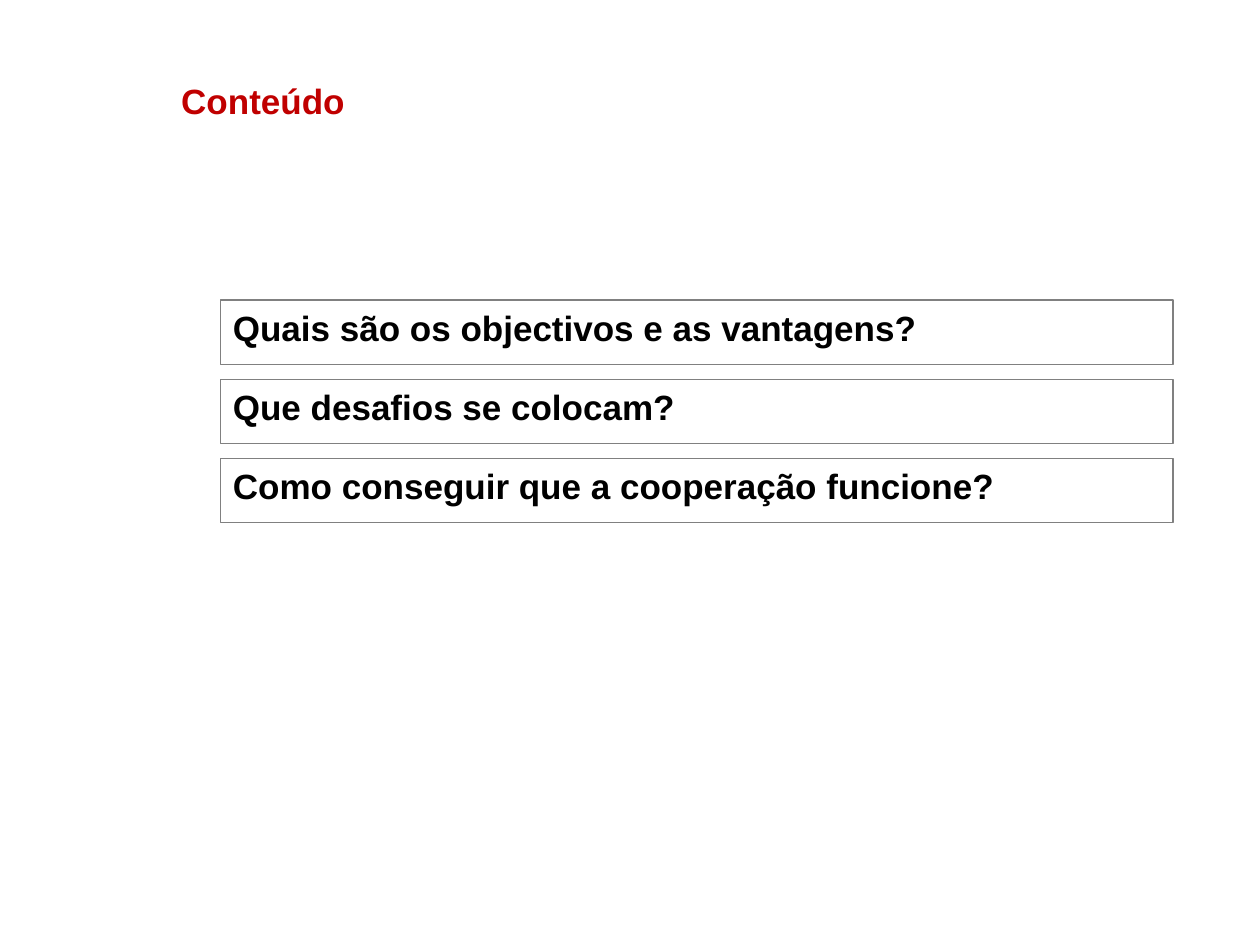
from dataclasses import dataclass

from pptx import Presentation
from pptx.dml.color import RGBColor
from pptx.enum import shapes, text
from pptx.util import Pt


@dataclass(frozen=True)
class Theme:
    font: str = "Arial"
    size: float = 20
    title: str = "C00000"
    body: str = "000000"
    border: str = "808080"
    border_width: float = 0.75


@dataclass(frozen=True)
class Label:
    """A line of text and its place, in points."""
    words: str
    left: float
    top: float
    height: float
    color: str
    space_after: float = 0
    width: float = 544.3


THEME = Theme()
LEFT, TOP, HEIGHT, STEP = 126, 171.4, 36.7, 45.3
TITLE = Label("Conteúdo", 96.5, 41.8, 35.3, THEME.title)
QUESTIONS = [
    ("Quais são os objectivos e as vantagens?", 0),
    ("Que desafios se colocam?", 12),
    ("Como conseguir que a cooperação funcione?", 12),
]


def write(sp, label: Label) -> None:
    tf = sp.text_frame
    tf.word_wrap = True
    tf.vertical_anchor = text.MSO_ANCHOR.TOP
    p = tf.paragraphs[0]
    p.alignment = text.PP_ALIGN.LEFT
    p.space_after = Pt(label.space_after)
    r = p.add_run()
    r.text = label.words
    formats = {"name": THEME.font, "size": Pt(THEME.size), "bold": True}
    for name, value in formats.items():
        setattr(r.font, name, value)
    r.font.color.rgb = RGBColor.from_string(label.color)


def frame(label: Label) -> tuple:
    return tuple(Pt(v) for v in (label.left, label.top, label.width, label.height))


def add_title(s, label: Label) -> None:
    write(s.shapes.add_textbox(*frame(label)), label)


def add_question(s, label: Label) -> None:
    sp = s.shapes.add_shape(shapes.MSO_SHAPE.RECTANGLE, *frame(label))
    sp.shadow.inherit = False
    sp.fill.background()
    sp.line.color.rgb = RGBColor.from_string(THEME.border)
    sp.line.width = Pt(THEME.border_width)
    write(sp, label)


def main() -> None:
    prs = Presentation()
    prs.slide_width, prs.slide_height = Pt(720), Pt(540)
    s = prs.slides.add_slide(prs.slide_layouts[6])
    add_title(s, TITLE)
    for i, (words, space_after) in enumerate(QUESTIONS):
        add_question(s, Label(words, LEFT, TOP + i * STEP, HEIGHT, THEME.body, space_after))
    prs.save("out.pptx")


if __name__ == "__main__":
    main()
